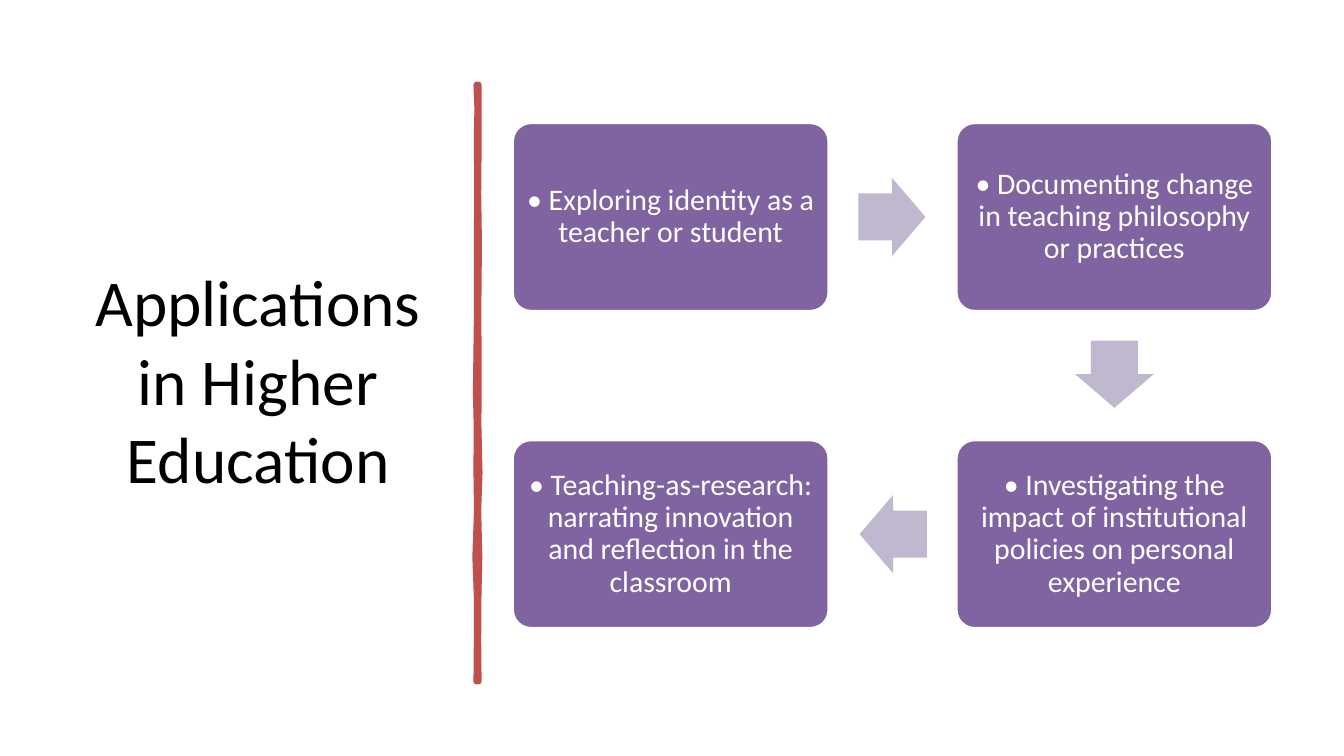
import pptx
import pptx.util
import pptx.dml.color
import pptx.enum.shapes
import pptx.enum.text

Pt = pptx.util.Pt
RGBColor = pptx.dml.color.RGBColor
MSO_SHAPE = pptx.enum.shapes.MSO_SHAPE

BLACK = RGBColor(0x00, 0x00, 0x00)
WHITE = RGBColor(0xFF, 0xFF, 0xFF)
RED = RGBColor(0xC0, 0x50, 0x4D)
PURPLE = RGBColor(0x80, 0x64, 0xA2)
LILAC = RGBColor(0xC0, 0xB8, 0xCE)

APPLICATIONS = [
    ("• Exploring identity as a teacher or student", 0, 0),
    ("• Documenting change in teaching philosophy or practices", 1, 0),
    ("• Investigating the impact of institutional policies on personal experience", 1, 1),
    ("• Teaching-as-research: narrating innovation and reflection in the classroom", 0, 1),
]

BRUSH_EDGES = [
    (0, -0.6, 0.5), (13, -0.1, 0.5), (27, -0.4, 0.6), (58, -0.2, 0.3),
    (85, -0.4, 0.7), (120, -0.3, 0.4), (165, -0.9, 0.6), (181, -0.5, 0.4),
    (208, -0.6, 1), (228, -0.3, 0.3), (253, -1.2, 0.9), (277, -0.3, 0.4),
    (298, -0.4, 0.3), (319.7, -0.6, 0.5),
]


def write_text(frame, text, size, color, inset=None, spacing=None, after=None):
    frame.word_wrap = True
    frame.vertical_anchor = pptx.enum.text.MSO_ANCHOR.MIDDLE
    if inset is not None:
        frame.margin_left = frame.margin_right = Pt(inset)
        frame.margin_top = frame.margin_bottom = Pt(inset)
    paragraph = frame.paragraphs[0]
    paragraph.alignment = pptx.enum.text.PP_ALIGN.CENTER
    if spacing is not None:
        paragraph.line_spacing = spacing
    if after is not None:
        paragraph.space_after = Pt(after)
    run = paragraph.add_run()
    run.text = text
    run.font.name = "Calibri"
    run.font.size = Pt(size)
    run.font.color.rgb = color


def paint(shape, fill, line=None, width=0):
    shape.shadow.inherit = False
    shape.fill.solid()
    shape.fill.fore_color.rgb = fill
    if line is None:
        shape.line.fill.background()
    else:
        shape.line.color.rgb = line
        shape.line.width = Pt(width)


def add_title(slide, left, top, width, height):
    title = slide.shapes.add_textbox(Pt(left), Pt(top), Pt(width), Pt(height))
    write_text(title.text_frame, "Applications in Higher Education", size=35, color=BLACK)


def add_brush_divider(slide, center, top):
    right_side = [(center + right, top + y) for y, left, right in BRUSH_EDGES]
    left_side = [(center + left, top + y) for y, left, right in reversed(BRUSH_EDGES)]
    outline = [(Pt(x), Pt(y)) for x, y in right_side + left_side]
    builder = slide.shapes.build_freeform(*outline[0])
    builder.add_line_segments(outline[1:], close=True)
    paint(builder.convert_to_shape(), RED, RED, 3.25)


def add_arrow(slide, center_x, center_y, width, height, rotation):
    arrow = slide.shapes.add_shape(
        MSO_SHAPE.RIGHT_ARROW, Pt(center_x - width / 2), Pt(center_y - height / 2),
        Pt(width), Pt(height))
    arrow.adjustments[0] = 0.6
    arrow.adjustments[1] = 0.5
    arrow.rotation = rotation
    paint(arrow, LILAC)


def add_cycle(slide, left, top, width, height):
    step_width, step_height = 170, 101.5
    arrow_width, arrow_height, arrow_gap = 36, 42, 15.5
    column_pitch = width - step_width
    row_pitch = height - step_height
    for index, (text, column, row) in enumerate(APPLICATIONS):
        step_left = left + column * column_pitch
        step_top = top + row * row_pitch
        step = slide.shapes.add_shape(
            MSO_SHAPE.ROUNDED_RECTANGLE, Pt(step_left), Pt(step_top),
            Pt(step_width), Pt(step_height))
        step.adjustments[0] = 0.1
        paint(step, PURPLE, WHITE, 2)
        write_text(step.text_frame, text, size=16, color=WHITE,
                   inset=5, spacing=0.9, after=5.6)
        if index < len(APPLICATIONS) - 1:
            next_column, next_row = APPLICATIONS[index + 1][1:]
            reach = arrow_gap + arrow_width / 2
            center_x = step_left + step_width / 2 + (next_column - column) * (step_width / 2 + reach)
            center_y = step_top + step_height / 2 + (next_row - row) * (step_height / 2 + reach)
            add_arrow(slide, center_x, center_y, arrow_width, arrow_height, index * 90)


def main():
    presentation = pptx.Presentation()
    presentation.slide_width = Pt(720)
    presentation.slide_height = Pt(405)
    slide = presentation.slides.add_slide(presentation.slide_layouts[6])
    add_title(slide, 37.5, 38.2, 201.6, 329.8)
    add_brush_divider(slide, 255.9, 45.4)
    add_cycle(slide, 274.3, 65.5, 407.7, 271.4)
    presentation.save("out.pptx")


if __name__ == "__main__":
    main()
